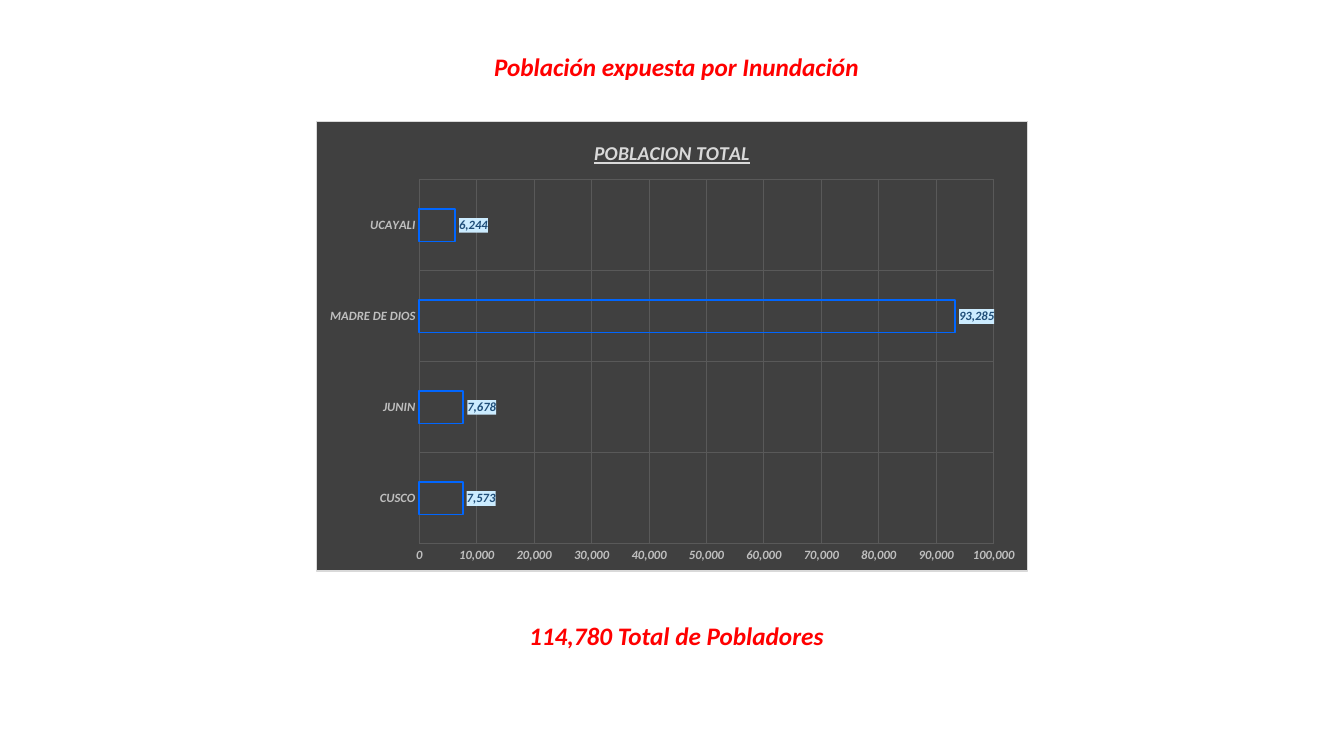
from lxml import etree
from pptx import Presentation
from pptx.chart.data import CategoryChartData
from pptx.dml.color import RGBColor
from pptx.enum.chart import XL_CHART_TYPE, XL_LABEL_POSITION, XL_TICK_MARK
from pptx.enum.text import MSO_ANCHOR, PP_ALIGN
from pptx.oxml import parse_xml
from pptx.oxml.ns import nsdecls, qn
from pptx.util import Inches, Pt

BAR_CLUSTERED = XL_CHART_TYPE.BAR_CLUSTERED
OUTSIDE_END = XL_LABEL_POSITION.OUTSIDE_END
NO_TICK = XL_TICK_MARK.NONE
CENTER = PP_ALIGN.CENTER
MIDDLE = MSO_ANCHOR.MIDDLE

RED = RGBColor(0xFF, 0x00, 0x00)
CHARCOAL = RGBColor(0x40, 0x40, 0x40)
GRID_GRAY = RGBColor(0x59, 0x59, 0x59)
AXIS_GRAY = RGBColor(0xBF, 0xBF, 0xBF)
LIGHT_GRAY = RGBColor(0xD9, 0xD9, 0xD9)
BAR_BLUE = RGBColor(0x00, 0x66, 0xFF)
LABEL_BLUE = RGBColor(0x1F, 0x4E, 0x79)
LABEL_FILL = RGBColor(0xCC, 0xEC, 0xFF)

POPULATION = {"CUSCO": 7573, "JUNIN": 7678, "MADRE DE DIOS": 93285, "UCAYALI": 6244}
NUMBER_FORMAT = "#,##0"


def area_format(fill, border=None):
    """Return a c:spPr element with a solid fill and an optional thin border."""
    sp_pr = parse_xml(
        f'<c:spPr {nsdecls("c", "a")}><a:solidFill><a:srgbClr val="{fill}"/></a:solidFill></c:spPr>')
    if border is not None:
        sp_pr.append(parse_xml(
            f'<a:ln {nsdecls("a")} w="{Pt(0.75)}"><a:solidFill>'
            f'<a:srgbClr val="{border}"/></a:solidFill></a:ln>'))
    return sp_pr


class SlideBuilder:
    font_name = "Calibri"

    def __init__(self, prs):
        self.s = prs.slides.add_slide(prs.slide_layouts[5])

    def style(self, font, size, color):
        font.name = self.font_name
        font.size = Pt(size)
        font.color.rgb = color
        font.bold = font.italic = True

    def fill_text(self, sp, text):
        tf = sp.text_frame
        tf.word_wrap = True
        tf.vertical_anchor = MIDDLE
        p = tf.paragraphs[0]
        p.text = text
        p.alignment = CENTER
        self.style(p.font, 18, RED)

    def title(self, text, left, top, width, height):
        sp = self.s.shapes.title
        sp.left, sp.top = Inches(left), Inches(top)
        sp.width, sp.height = Inches(width), Inches(height)
        self.fill_text(sp, text)

    def text(self, text, left, top, width, height):
        sp = self.s.shapes.add_textbox(Inches(left), Inches(top), Inches(width), Inches(height))
        self.fill_text(sp, text)

    def axis(self, axis):
        axis.major_tick_mark = axis.minor_tick_mark = NO_TICK
        axis.format.line.fill.background()
        axis.has_major_gridlines = True
        grid = axis.major_gridlines.format.line
        grid.color.rgb = GRID_GRAY
        grid.width = Pt(0.75)
        self.style(axis.tick_labels.font, 9, AXIS_GRAY)

    def plot_layout(self, chart, **fractions):
        """Place the inner plot area by fractions of the chart's size."""
        area = chart.element.find(".//" + qn("c:plotArea"))
        for old in area.findall(qn("c:layout")):
            area.remove(old)
        layout = etree.Element(qn("c:layout"))
        manual = etree.SubElement(layout, qn("c:manualLayout"))
        settings = {"layoutTarget": "inner", "xMode": "edge", "yMode": "edge", **fractions}
        for name, value in settings.items():
            etree.SubElement(manual, qn("c:" + name)).set("val", str(value))
        area.insert(0, layout)

    def bar_chart(self, title, values, left, top, width, height):
        data = CategoryChartData(number_format=NUMBER_FORMAT)
        data.categories = list(values)
        data.add_series("Series 1", list(values.values()))
        chart = self.s.shapes.add_chart(
            BAR_CLUSTERED, Inches(left), Inches(top), Inches(width), Inches(height), data).chart
        chart.font.name, chart.font.size = self.font_name, Pt(10)
        chart.has_legend = False
        chart.has_title = True
        p = chart.chart_title.text_frame.paragraphs[0]
        p.text = title
        self.style(p.font, 14, LIGHT_GRAY)
        p.font.underline = True
        chart.chart_title.include_in_layout = False

        self.axis(chart.category_axis)
        self.axis(chart.value_axis)
        chart.value_axis.minimum_scale = 0
        chart.value_axis.maximum_scale = 100000
        chart.value_axis.major_unit = 10000
        chart.value_axis.tick_labels.number_format = NUMBER_FORMAT
        chart.value_axis.tick_labels.number_format_is_linked = False

        plot = chart.plots[0]
        plot.vary_by_categories = False
        plot.gap_width, plot.overlap = 182, -50
        series = plot.series[0]
        series.format.fill.background()
        series.format.line.color.rgb = BAR_BLUE
        series.format.line.width = Pt(1.25)
        labels = series.data_labels
        labels.show_value = True
        labels.position = OUTSIDE_END
        labels.number_format = NUMBER_FORMAT
        labels.number_format_is_linked = False
        self.style(labels.font, 9, LABEL_BLUE)

        label_text = chart.element.find(".//" + qn("c:dLbls") + "/" + qn("c:txPr"))
        label_text.addprevious(area_format(LABEL_FILL))
        chart.element.find(qn("c:chart")).addnext(area_format(CHARCOAL, LIGHT_GRAY))
        self.plot_layout(chart, x=0.145, y=0.13, w=0.807, h=0.81)


def main():
    prs = Presentation()
    prs.slide_width, prs.slide_height = Inches(13.33), Inches(7.5)
    slide = SlideBuilder(prs)
    slide.title("Población expuesta por Inundación", 4.78, 0.46, 3.86, 0.4)
    slide.text("114,780 Total de Pobladores", 5.03, 6.1, 3.36, 0.4)
    slide.bar_chart("POBLACION TOTAL", POPULATION, 3.13, 1.2, 7.07, 4.47)
    prs.save("out.pptx")


if __name__ == "__main__":
    main()
